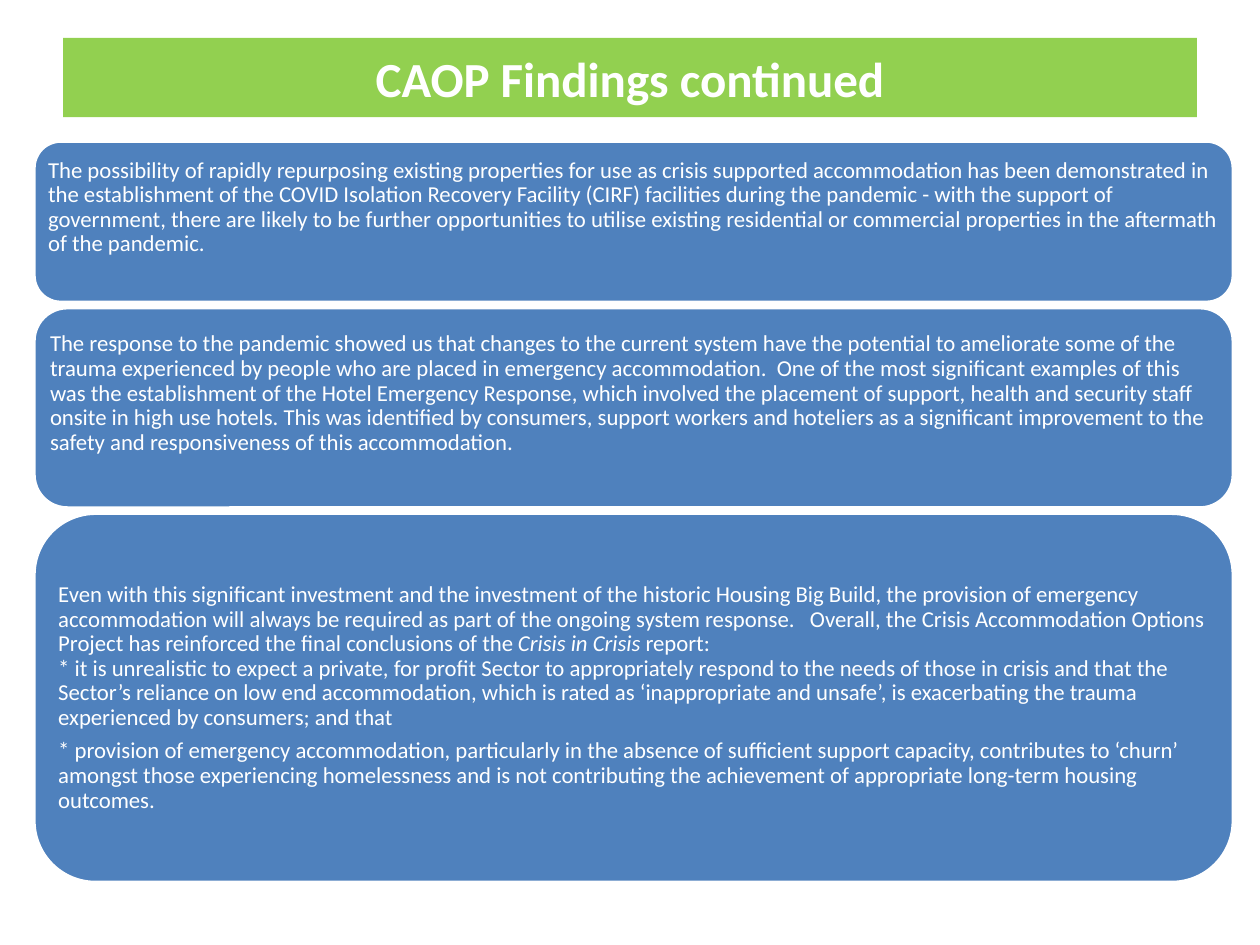
from pptx import Presentation
from pptx.dml.color import RGBColor
from pptx.enum import shapes, text
from pptx.util import Pt

WHITE = RGBColor(0xFF, 0xFF, 0xFF)
GREEN = RGBColor(0x92, 0xD0, 0x50)
BLUE = RGBColor(0x4F, 0x81, 0xBD)
FONT = "Calibri"

INSET = 3.6
TEXT_RAISE = 16  # extra bottom inset that lifts single-paragraph text
PANEL_GAP = 3

# Each panel: height, bottom inset, paragraphs.
# A paragraph is a list of lines; a line is a list of (text, italic) runs.
PANELS = [
    (92.2, INSET + TEXT_RAISE, [
        [[("The possibility of rapidly repurposing existing properties for use as "
           "crisis supported accommodation has been demonstrated in the establishment "
           "of the COVID Isolation Recovery Facility (CIRF) facilities during the "
           "pandemic - with the support of government, there are likely to be further "
           "opportunities to utilise existing residential or commercial properties in "
           "the aftermath of the pandemic.", False)]],
    ]),
    (114.5, INSET + TEXT_RAISE, [
        [[("The response to the pandemic showed us that changes to the current system "
           "have the potential to ameliorate some of the trauma experienced by people "
           "who are placed in emergency accommodation.  One of the most significant "
           "examples of this was the establishment of the Hotel Emergency Response, "
           "which involved the placement of support, health and security staff onsite "
           "in high use hotels. This was identified by consumers, support workers and "
           "hoteliers as a significant improvement to the safety and responsiveness of "
           "this accommodation.", False)]],
    ]),
    (211, INSET, [
        [[("Even with this significant investment and the investment of the historic "
           "Housing Big Build, the provision of emergency accommodation will always be "
           "required as part of the ongoing system response.   Overall, the Crisis "
           "Accommodation Options Project has reinforced the final conclusions of the ",
           False),
          ("Crisis in Crisis", True),
          (" report:", False)],
         [("* it is unrealistic to expect a private, for profit Sector to "
           "appropriately respond to the needs of those in crisis and that the "
           "Sector’s reliance on low end accommodation, which is rated as "
           "‘inappropriate and unsafe’, is exacerbating the trauma experienced by "
           "consumers; and that", False)]],
        [[("* provision of emergency accommodation, particularly in the absence of "
           "sufficient support capacity, contributes to ‘churn’ amongst those "
           "experiencing homelessness and is not contributing the achievement of "
           "appropriate long-term housing outcomes.", False)]],
    ]),
]


def set_font(p, size, bold=False):
    p.font.name = FONT
    p.font.size = Pt(size)
    p.font.bold = bold
    p.font.color.rgb = WHITE


def place_title(slide, left, top, width, height):
    title = slide.shapes.title
    title.left, title.top = Pt(left), Pt(top)
    title.width, title.height = Pt(width), Pt(height)
    title.fill.solid()
    title.fill.fore_color.rgb = GREEN
    tf = title.text_frame
    tf.text = "CAOP Findings continued"
    tf.vertical_anchor = text.MSO_ANCHOR.MIDDLE
    p = tf.paragraphs[0]
    p.alignment = text.PP_ALIGN.CENTER
    set_font(p, 28, bold=True)


def fill_paragraph(p, lines):
    p.alignment = text.PP_ALIGN.LEFT
    p.line_spacing = 0.9
    p.space_after = Pt(5)
    set_font(p, 13)
    for i, line in enumerate(lines):
        if i:
            p.add_line_break()
        for words, italic in line:
            r = p.add_run()
            r.text = words
            if italic:
                r.font.italic = True


def add_panel(slide, left, top, width, height, bottom_inset, paragraphs):
    sp = slide.shapes.add_shape(shapes.MSO_SHAPE.ROUNDED_RECTANGLE,
                                Pt(left), Pt(top), Pt(width), Pt(height))
    sp.shadow.inherit = False
    sp.fill.solid()
    sp.fill.fore_color.rgb = BLUE
    sp.line.color.rgb = WHITE
    sp.line.width = Pt(2)
    tf = sp.text_frame
    tf.word_wrap = True
    tf.vertical_anchor = text.MSO_ANCHOR.MIDDLE
    tf.margin_left = tf.margin_right = tf.margin_top = Pt(INSET)
    tf.margin_bottom = Pt(bottom_inset)
    for i, lines in enumerate(paragraphs):
        fill_paragraph(tf.add_paragraph() if i else tf.paragraphs[0], lines)


def stack_panels(slide, left, top, width):
    for height, bottom_inset, paragraphs in PANELS:
        add_panel(slide, left, top, width, height, bottom_inset, paragraphs)
        top += height + PANEL_GAP


def main():
    prs = Presentation()
    prs.slide_width, prs.slide_height = Pt(720), Pt(540)
    slide = prs.slides.add_slide(prs.slide_layouts[5])  # title only

    # Title band
    place_title(slide, 36, 21.6, 648, 45.4)
    # Findings
    stack_panels(slide, 19.4, 80.6, 685.4)

    prs.save("out.pptx")


if __name__ == "__main__":
    main()
